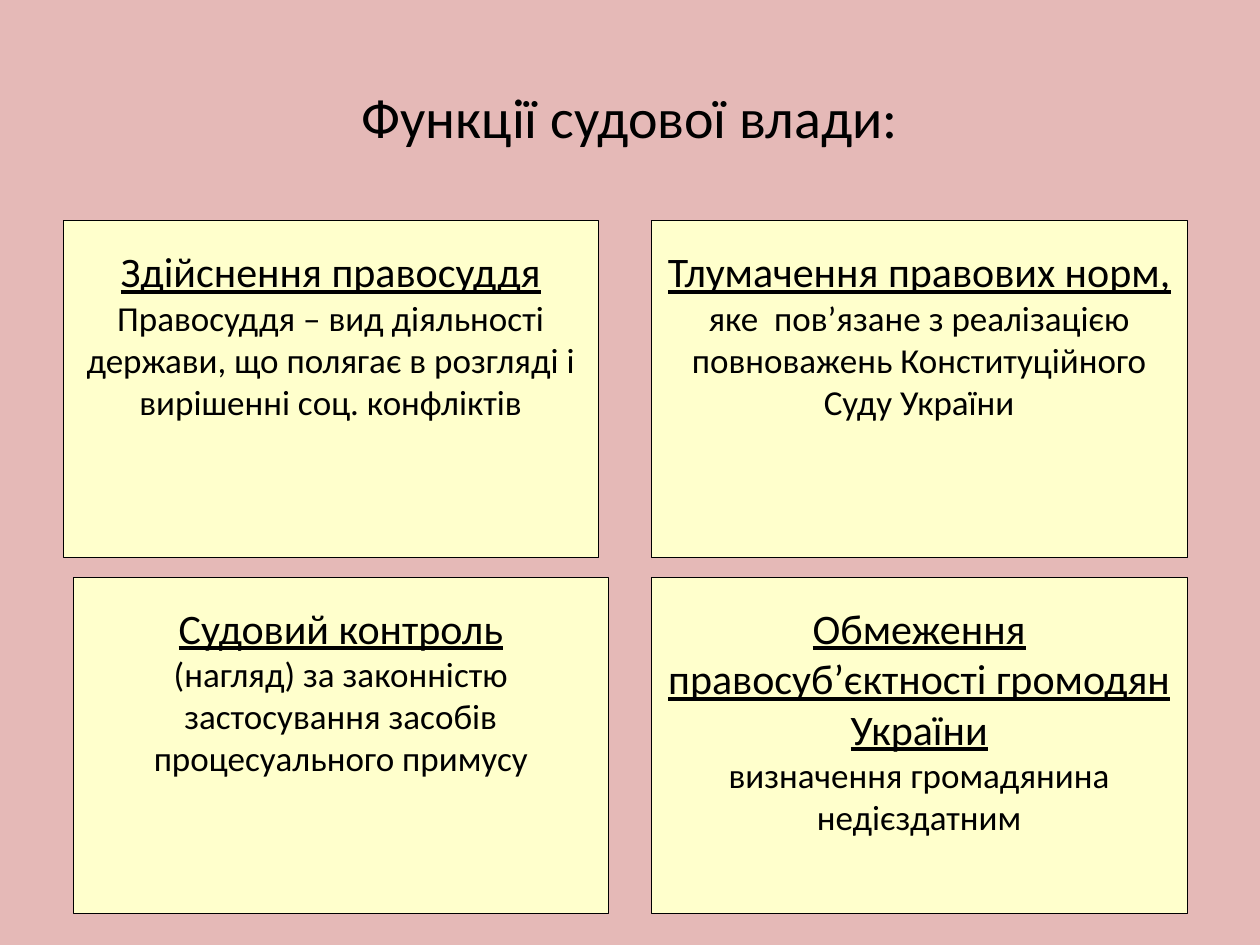
from pptx import Presentation
from pptx.dml.color import RGBColor
from pptx.enum.shapes import MSO_SHAPE
from pptx.enum.text import MSO_ANCHOR, PP_ALIGN
from pptx.util import Inches, Pt

RECTANGLE = MSO_SHAPE.RECTANGLE
TOP, MIDDLE = MSO_ANCHOR.TOP, MSO_ANCHOR.MIDDLE
CENTER = PP_ALIGN.CENTER

FONT = "Calibri"
COLORS = {"background": "E5B9B7", "card": "FFFFCC", "ink": "000000"}
CARD_WIDTH, CARD_HEIGHT = 4.25, 2.67
TOP_ROW, BOTTOM_ROW = 1.75, 4.58
RIGHT_COLUMN = 5.17

# Left, top, heading, explanation; the lower left card is set slightly inwards
CARDS = [
    (0.5, TOP_ROW, "Здійснення правосуддя",
     "Правосуддя – вид діяльності держави, що полягає в розгляді і вирішенні соц. конфліктів"),
    (RIGHT_COLUMN, TOP_ROW, "Тлумачення правових норм,",
     "яке  пов’язане з реалізацією повноважень Конституційного Суду України"),
    (0.58, BOTTOM_ROW, "Судовий контроль",
     "(нагляд) за законністю застосування засобів процесуального примусу"),
    (RIGHT_COLUMN, BOTTOM_ROW, "Обмеження правосуб’єктності громодян України",
     "визначення громадянина недієздатним"),
]


def color(name):
    return RGBColor.from_string(COLORS[name])


def write(paragraph, text, size, underline=False):
    paragraph.alignment = CENTER
    run = paragraph.add_run()
    run.text = text
    run.font.name = FONT
    run.font.size = Pt(size)
    run.font.underline = underline
    run.font.color.rgb = color("ink")


presentation = Presentation()
presentation.slide_width = Inches(10)
presentation.slide_height = Inches(7.5)
slide = presentation.slides.add_slide(presentation.slide_layouts[5])

# Background
slide.background.fill.solid()
slide.background.fill.fore_color.rgb = color("background")

# Title
title = slide.shapes.title
title.left, title.top = Inches(0.5), Inches(0.3)
title.width, title.height = Inches(9), Inches(1.25)
title.text_frame.vertical_anchor = MIDDLE
write(title.text_frame.paragraphs[0], "Функції судової влади:", 32)

# Cards with the four functions
for left, top, heading, explanation in CARDS:
    card = slide.shapes.add_shape(
        RECTANGLE, Inches(left), Inches(top), Inches(CARD_WIDTH), Inches(CARD_HEIGHT))
    card.shadow.inherit = False
    card.fill.solid()
    card.fill.fore_color.rgb = color("card")
    card.line.color.rgb = color("ink")
    card.line.width = Pt(0.25)

    text_frame = card.text_frame
    text_frame.word_wrap = True
    text_frame.vertical_anchor = TOP
    text_frame.margin_left = text_frame.margin_right = Inches(0.1)
    text_frame.margin_top = text_frame.margin_bottom = Inches(0.2)
    write(text_frame.paragraphs[0], heading, 24, underline=True)
    write(text_frame.add_paragraph(), explanation, 20)

presentation.save("out.pptx")
